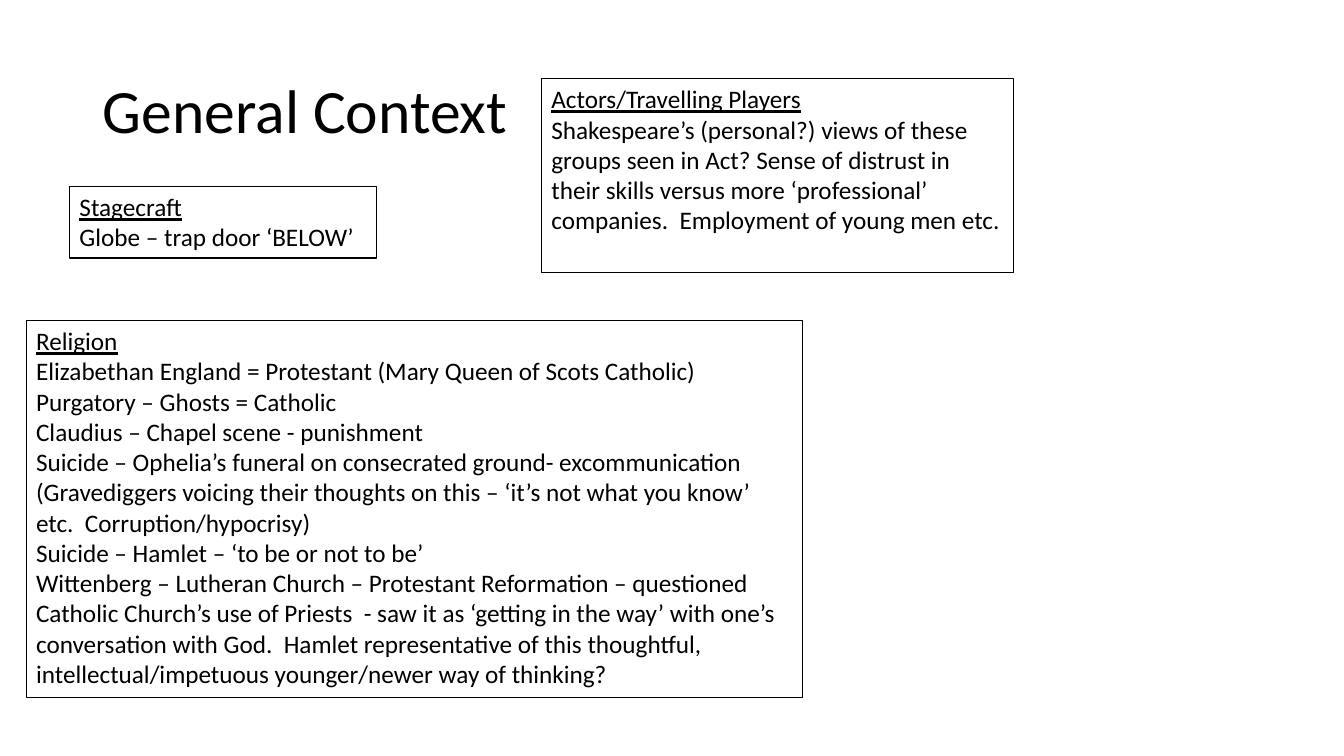
from dataclasses import dataclass

from pptx import Presentation
from pptx.dml.color import RGBColor
from pptx.enum.text import MSO_ANCHOR as Anchor, MSO_AUTO_SIZE as AutoSize, PP_ALIGN as Align
from pptx.util import Pt

EMU_PER_PX = 9144
SLIDE_SIZE = (1333, 750)
TITLE_ONLY_LAYOUT = 5


@dataclass(frozen=True)
class Theme:
    font: str = "Calibri"
    ink: RGBColor = RGBColor(0, 0, 0)
    title_size: float = 44
    body_size: float = 18
    border: float = 0.75


THEME = Theme()

STAGECRAFT = ["Globe – trap door ‘BELOW’"]
RELIGION = [
    "Elizabethan England = Protestant (Mary Queen of Scots Catholic)",
    "Purgatory – Ghosts = Catholic",
    "Claudius – Chapel scene - punishment",
    "Suicide – Ophelia’s funeral on consecrated ground- excommunication "
    "(Gravediggers voicing their thoughts on this – ‘it’s not what you know’ "
    "etc.  Corruption/hypocrisy)",
    "Suicide – Hamlet – ‘to be or not to be’",
    "Wittenberg – Lutheran Church – Protestant Reformation – questioned "
    "Catholic Church’s use of Priests  - saw it as ‘getting in the way’ with one’s "
    "conversation with God.  Hamlet representative of this thoughtful, "
    "intellectual/impetuous younger/newer way of thinking?",
]
ACTORS = [
    "Shakespeare’s (personal?) views of these groups seen in Act? Sense of distrust in "
    "their skills versus more ‘professional’ companies.  Employment of young men etc.",
]


def px(*lengths):
    return [length * EMU_PER_PX for length in lengths]


def style(paragraph, size):
    paragraph.font.name = THEME.font
    paragraph.font.size = Pt(size)
    paragraph.font.color.rgb = THEME.ink


def set_title(slide, text, box):
    title = slide.shapes.title
    title.left, title.top, title.width, title.height = px(*box)
    frame = title.text_frame
    frame.text = text
    frame.auto_size = AutoSize.NONE
    frame.vertical_anchor = Anchor.MIDDLE
    paragraph = frame.paragraphs[0]
    paragraph.alignment = Align.LEFT
    paragraph.line_spacing = 0.9
    style(paragraph, THEME.title_size)


def add_note_box(slide, heading, lines, box):
    shape = slide.shapes.add_textbox(*px(*box))
    shape.line.color.rgb = THEME.ink
    shape.line.width = Pt(THEME.border)
    frame = shape.text_frame
    frame.word_wrap = True
    frame.auto_size = AutoSize.NONE
    frame.text = "\n".join([heading, *lines])
    for paragraph in frame.paragraphs:
        style(paragraph, THEME.body_size)
    frame.paragraphs[0].font.underline = True


def main():
    presentation = Presentation()
    presentation.slide_width, presentation.slide_height = px(*SLIDE_SIZE)
    slide = presentation.slides.add_slide(presentation.slide_layouts[TITLE_ONLY_LAYOUT])
    set_title(slide, "General Context", (92, 40, 1150, 145))
    add_note_box(slide, "Stagecraft", STAGECRAFT, (69, 185, 304, 71))
    add_note_box(slide, "Religion", RELIGION, (26, 318, 770, 374))
    add_note_box(slide, "Actors/Travelling Players", ACTORS, (537, 78, 468, 192))
    presentation.save("out.pptx")


if __name__ == "__main__":
    main()
